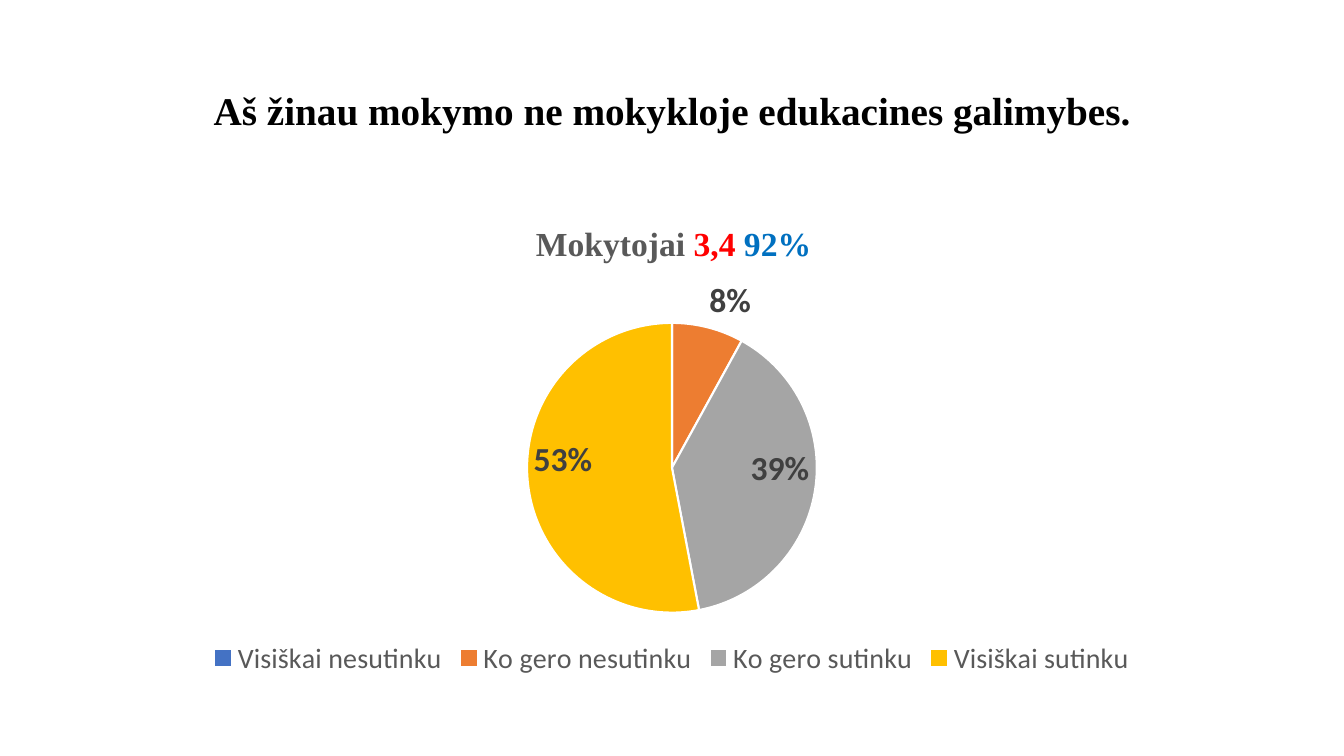
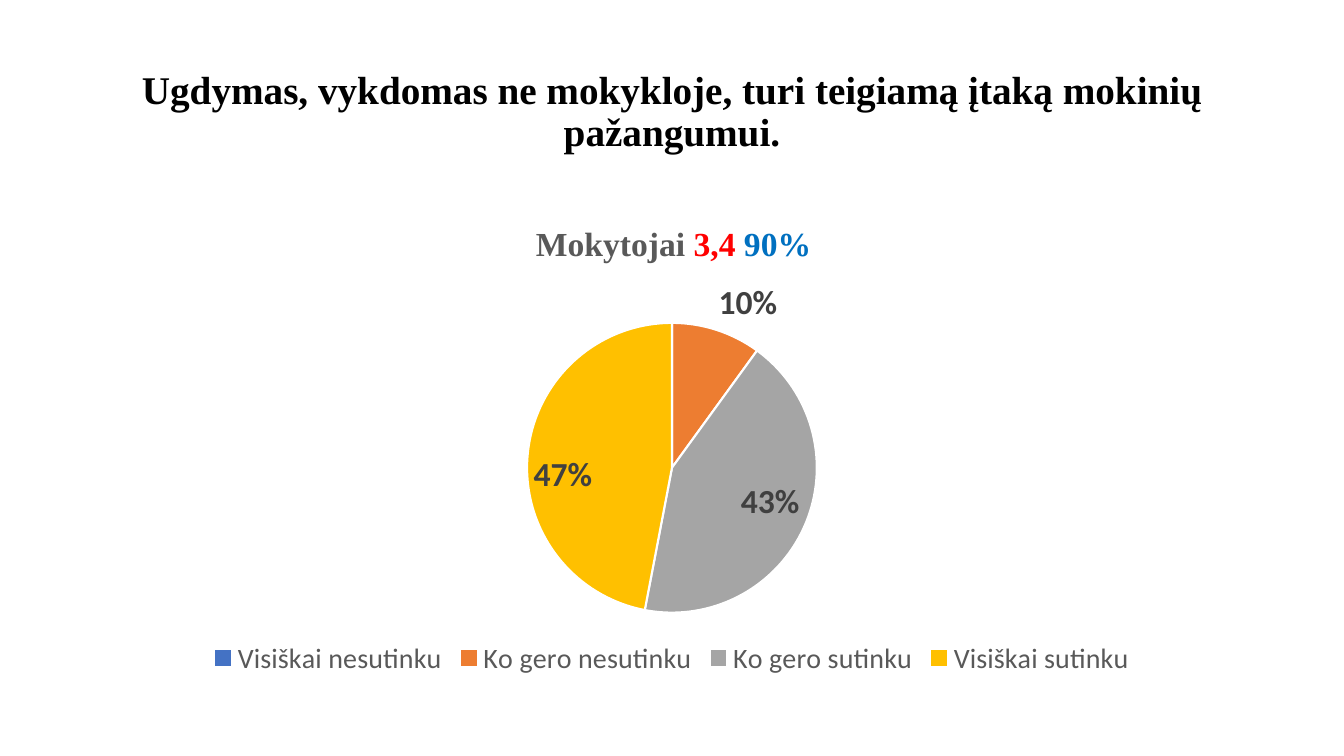
from lxml import etree
from pptx import Presentation, util as u
from pptx.chart import data
from pptx.dml import color
from pptx.enum import chart as charts, text
from pptx.oxml import ns

SERIF = {"name": "Times New Roman", "bold": True}
HEADING = {**SERIF, "size": u.Pt(28)}
CHART_TITLE = {**SERIF, "size": u.Pt(24)}
LABEL = {"name": "Calibri", "size": u.Pt(24), "bold": True}
LEGEND = {"name": "Calibri", "size": u.Pt(20)}
BASE = {"name": "Calibri", "size": u.Pt(10)}
BLACK, GREY, DARK, WHITE = "000000", "595959", "404040", "FFFFFF"
RED, BLUE = "FF0000", "0070C0"

ANSWERS = {
    "Visiškai nesutinku": "4472C4",
    "Ko gero nesutinku": "ED7D31",
    "Ko gero sutinku": "A5A5A5",
    "Visiškai sutinku": "FFC000",
}
TITLE_BOX = (2.33, 1.01, 29.21, 3.68)
CHART_BOX = (2.33, 5.08, 29.21, 12.09)
PAGES = [
    ("Aš žinau mokymo ne mokykloje edukacines galimybes.",
     "3,4", "92%", (0, 0.08, 0.39, 0.53)),
    ("Ugdymas, vykdomas ne mokykloje, turi teigiamą įtaką mokinių pažangumui.",
     "3,4", "90%", (0, 0.1, 0.43, 0.47)),
]


def paint(target, value):
    """Give a font or a fill a solid colour from a hex string."""
    if hasattr(target, "solid"):
        target.solid()
        target = target.fore_color
    else:
        target = target.color
    target.rgb = color.RGBColor.from_string(value)


def style(font, values, value):
    """Set a font's format values and colour."""
    for name, setting in values.items():
        setattr(font, name, setting)
    paint(font, value)


def place(parent, index, **fractions):
    """Fix the layout of a chart part by fractions of the chart."""
    for old in parent.findall(ns.qn("c:layout")):
        parent.remove(old)
    layout = etree.Element(ns.qn("c:layout"))
    manual = etree.SubElement(layout, ns.qn("c:manualLayout"))
    if "w" in fractions:
        etree.SubElement(manual, ns.qn("c:layoutTarget")).set("val", "inner")
    for axis in ("x", "y"):
        etree.SubElement(manual, ns.qn(f"c:{axis}Mode")).set("val", "edge")
    for name, fraction in fractions.items():
        etree.SubElement(manual, ns.qn(f"c:{name}")).set("val", str(fraction))
    parent.insert(index, layout)


def add_heading(page, box, words):
    """Add the centred slide heading."""
    frame = page.shapes.add_textbox(*map(u.Cm, box)).text_frame
    frame.word_wrap = True
    frame.vertical_anchor = text.MSO_ANCHOR.MIDDLE
    para = frame.paragraphs[0]
    para.alignment = text.PP_ALIGN.CENTER
    para.line_spacing = 0.9
    span = para.add_run()
    span.text = words
    style(span.font, HEADING, BLACK)


def add_chart_title(chart, mean, share):
    """Title the chart with the group, its mean and its share of agreement."""
    para = chart.chart_title.text_frame.paragraphs[0]
    for words, value in (("Mokytojai ", GREY), (f"{mean} ", RED), (share, BLUE)):
        span = para.add_run()
        span.text = words
        style(span.font, CHART_TITLE, value)
    place(chart.element.xpath("c:chart/c:title")[0], 1, x=0.38, y=0.04)


def style_slices(series, values):
    """Colour the slices and label those that are not empty."""
    series.data_labels.show_value = False
    position = charts.XL_LABEL_POSITION
    for index, (value, fill) in enumerate(zip(values, ANSWERS.values())):
        point = series.points[index]
        paint(point.format.fill, fill)
        paint(point.format.line.fill, WHITE)
        point.format.line.width = u.Pt(1.5)
        if value:
            label = point.data_label
            style(label.font, LABEL, DARK)
            label.position = (position.INSIDE_END if value > 0.2
                              else position.OUTSIDE_END)


def add_pie(page, box, mean, share, values):
    """Add the pie chart of answers with its title and legend."""
    answers = data.CategoryChartData(number_format="0%")
    answers.categories = list(ANSWERS)
    answers.add_series("Mokytojai", values)
    chart = page.shapes.add_chart(
        charts.XL_CHART_TYPE.PIE, *map(u.Cm, box), answers).chart
    style(chart.font, BASE, BLACK)
    add_chart_title(chart, mean, share)
    chart.has_legend = True
    chart.legend.position = charts.XL_LEGEND_POSITION.BOTTOM
    chart.legend.include_in_layout = False
    style(chart.legend.font, LEGEND, GREY)
    plot = chart.plots[0]
    plot.vary_by_categories = True
    style_slices(plot.series[0], values)
    place(chart.element.xpath("c:chart/c:plotArea")[0], 0,
          x=0.375, y=0.25, w=0.25, h=0.61)


def main():
    """Build the deck."""
    deck = Presentation()
    deck.slide_width, deck.slide_height = u.Cm(33.87), u.Cm(19.05)
    for heading, *results in PAGES:
        page = deck.slides.add_slide(deck.slide_layouts[6])
        add_heading(page, TITLE_BOX, heading)
        add_pie(page, CHART_BOX, *results)
    deck.save("out.pptx")


if __name__ == "__main__":
    main()
